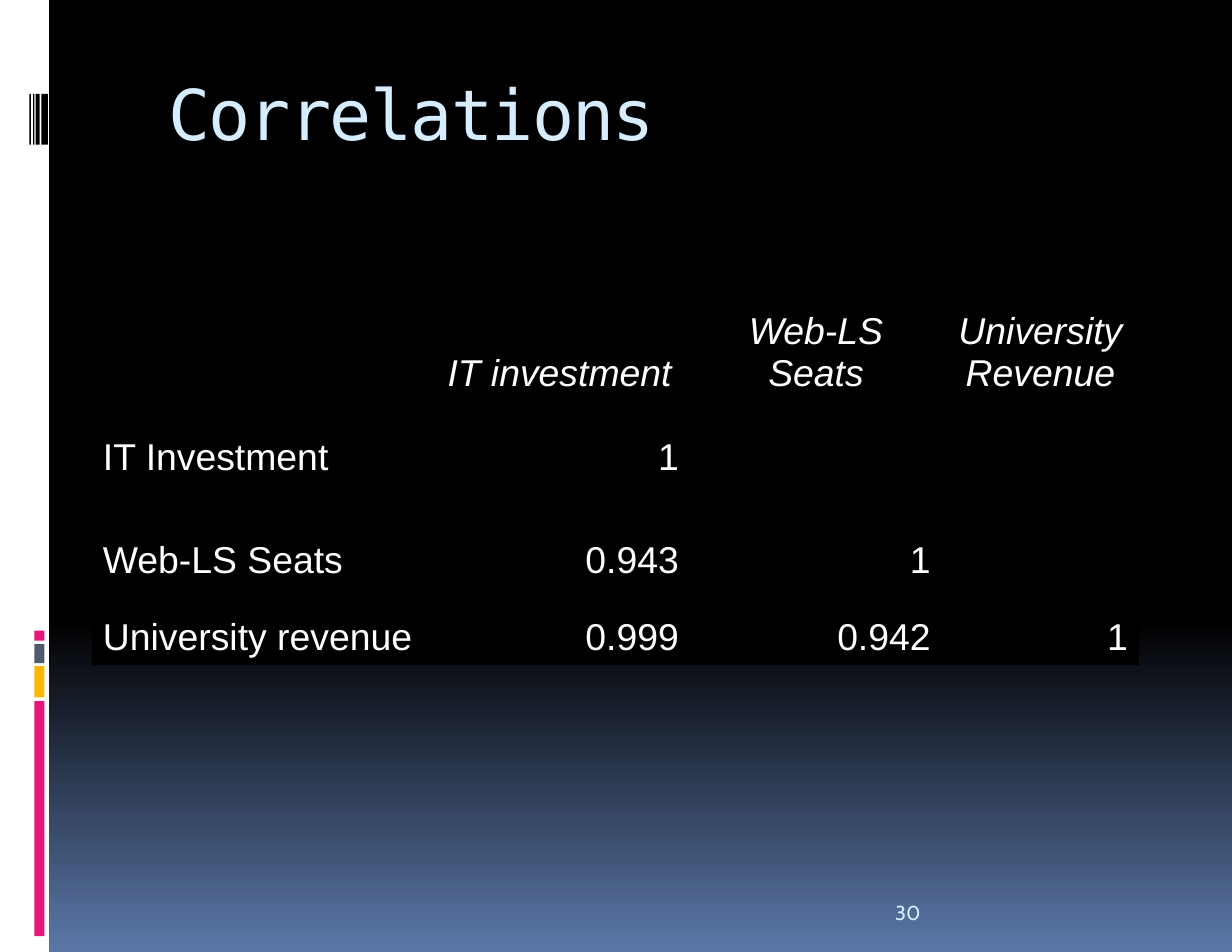
import pptx
import pptx.dml.color
import pptx.enum.shapes
import pptx.enum.text
import pptx.oxml
import pptx.oxml.ns
import pptx.util
from pptx.util import Cm

COLORS = {
    "black": "000000",
    "white": "FFFFFF",
    "blue": "5B77A8",
    "pale": "D6ECFF",
    "pink": "EA157A",
    "amber": "FEB80A",
    "slate": "4E5B6F",
}
NO_STYLE = "{2D5ABB26-0587-4C30-8999-92F81FD0307C}"
ALIGN = pptx.enum.text.PP_ALIGN
ANCHOR = pptx.enum.text.MSO_ANCHOR

# left, width, colour
SIDE_BARCODE = [(0.69, 0.03), (0.81, 0.03), (0.82 + 0.01, 0.06), (0.95, 0.14)]
SIDE_BARCODE = [(0.67, 0.03), (0.75, 0.03), (0.81, 0.09), (0.94, 0.15)]
# top, height, colour
SIDE_BLOCKS = [
    (14.3, 0.23, "pink"),
    (14.61, 0.43, "slate"),
    (15.11, 0.71, "amber"),
    (15.9, 5.33, "pink"),
]
COLUMN_WIDTHS = [7.65, 5.92, 5.71, 4.47]
ROW_HEIGHTS = [2.84, 1.91, 2.34, 1.75]
CORRELATIONS = [
    ["", "IT investment", "Web-LS Seats", "University Revenue"],
    ["IT Investment", "1", "", ""],
    ["Web-LS Seats", "0.943", "1", ""],
    ["University revenue", "0.999", "0.942", "1"],
]


def rgb(name):
    return pptx.dml.color.RGBColor.from_string(COLORS[name])


def set_background(slide):
    fill = slide.background.fill
    fill.gradient()
    fill.gradient_angle = 270
    for stop, position, color in zip(fill.gradient_stops, (0.65, 1), ("black", "blue")):
        stop.position = position
        stop.color.rgb = rgb(color)


def add_bar(slide, left, top, width, height, color):
    sp = slide.shapes.add_shape(
        pptx.enum.shapes.MSO_SHAPE.RECTANGLE, Cm(left), Cm(top), Cm(width), Cm(height)
    )
    sp.shadow.inherit = False
    sp.fill.solid()
    sp.fill.fore_color.rgb = rgb(color)
    sp.line.fill.background()


def add_side_strip(slide):
    add_bar(slide, 0, 0, 1.11, 21.59, "white")
    for top, height, color in SIDE_BLOCKS:
        add_bar(slide, 0.78, top, 0.23, height, color)
    for left, width in SIDE_BARCODE:
        add_bar(slide, left, 2.13, width, 1.15, "black")


def add_run(p, text, font, size, color, italic=False):
    r = p.add_run()
    r.text = text
    r.font.name = font
    r.font.size = pptx.util.Pt(size)
    r.font.color.rgb = rgb(color)
    r.font.italic = italic
    return r


def set_frame(tf, anchor):
    tf.word_wrap = True
    tf.auto_size = pptx.enum.text.MSO_AUTO_SIZE.NONE
    tf.vertical_anchor = anchor
    tf.margin_left = tf.margin_right = Cm(0.28)
    tf.margin_top = tf.margin_bottom = Cm(0.15)


def set_title(slide, text):
    title = slide.shapes.title
    title.left, title.top, title.width, title.height = Cm(3.53), Cm(1.45), Cm(23.75), Cm(3.61)
    set_frame(title.text_frame, ANCHOR.TOP)
    p = title.text_frame.paragraphs[0]
    p.alignment = ALIGN.LEFT
    r = add_run(p, text, "DejaVu Sans Mono", 45, "pale")
    r.font._element.set("spc", "-110")


def add_slide_number(slide, text):
    box = slide.shapes.add_textbox(Cm(20.02), Cm(19.66), Cm(5.82), Cm(1.45))
    set_frame(box.text_frame, ANCHOR.BOTTOM)
    add_run(box.text_frame.paragraphs[0], text, "Cabin", 13, "pale")


def add_border(cell, side):
    """Rule one side of a cell; side is the tag lnT or lnB."""
    line = pptx.oxml.parse_xml(
        f'<a:{side} {pptx.oxml.ns.nsdecls("a")} w="12700"><a:solidFill>'
        f'<a:srgbClr val="{COLORS["black"]}"/></a:solidFill></a:{side}>'
    )
    cell._tc.get_or_add_tcPr().insert(0, line)


def fill_cell(cell, text, row, col):
    cell.fill.solid()
    cell.fill.fore_color.rgb = rgb("black")
    cell.vertical_anchor = ANCHOR.BOTTOM
    if row in (0, 1):
        add_border(cell, "lnT")
    if row == len(CORRELATIONS) - 1:
        add_border(cell, "lnB")
    if text:
        p = cell.text_frame.paragraphs[0]
        if row == 0:
            p.alignment = ALIGN.CENTER
        else:
            p.alignment = ALIGN.RIGHT if col else ALIGN.LEFT
        add_run(p, text, "Arial", 24, "white", italic=row == 0)


def add_correlation_table(slide):
    frame = slide.shapes.add_table(
        len(ROW_HEIGHTS), len(COLUMN_WIDTHS), Cm(2.08), Cm(6.22),
        Cm(sum(COLUMN_WIDTHS)), Cm(sum(ROW_HEIGHTS)),
    )
    table = frame.table
    table._tbl.tblPr.find(pptx.oxml.ns.qn("a:tableStyleId")).text = NO_STYLE
    table.horz_banding = False
    for column, width in zip(table.columns, COLUMN_WIDTHS):
        column.width = Cm(width)
    for row, height in zip(table.rows, ROW_HEIGHTS):
        row.height = Cm(height)
    for i, values in enumerate(CORRELATIONS):
        for j, text in enumerate(values):
            fill_cell(table.cell(i, j), text, i, j)


def main():
    prs = pptx.Presentation()
    prs.slide_width, prs.slide_height = Cm(27.94), Cm(21.59)
    slide = prs.slides.add_slide(prs.slide_layouts[5])
    set_background(slide)
    add_side_strip(slide)
    set_title(slide, "Correlations")
    add_correlation_table(slide)
    add_slide_number(slide, "30")
    prs.save("out.pptx")


if __name__ == "__main__":
    main()
